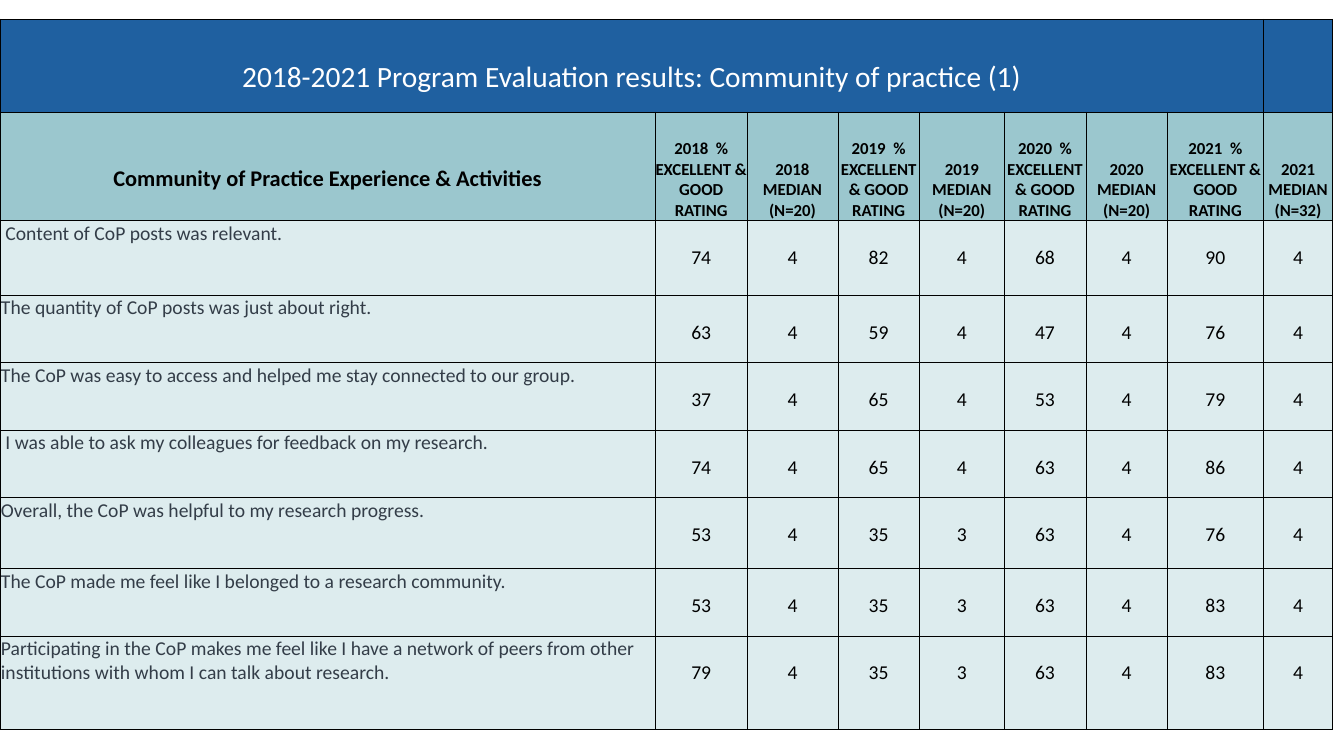
from lxml import etree
from pptx import Presentation
from pptx.dml.color import RGBColor
from pptx.enum.text import MSO_ANCHOR, PP_ALIGN
from pptx.oxml.ns import qn
from pptx.util import Inches, Pt

LEFT, CENTER = PP_ALIGN.LEFT, PP_ALIGN.CENTER
TOP, BOTTOM = MSO_ANCHOR.TOP, MSO_ANCHOR.BOTTOM
BLUE = RGBColor(0x1F, 0x60, 0xA0)
TEAL = RGBColor(0x9B, 0xC7, 0xCE)
PALE = RGBColor(0xDD, 0xEC, 0xEE)
SLATE = RGBColor(0x33, 0x3D, 0x48)
BLACK = RGBColor(0, 0, 0)
WHITE = RGBColor(0xFF, 0xFF, 0xFF)

COLUMN_WIDTHS = [6.5, 0.91, 0.9, 0.81, 0.84, 0.81, 0.81, 0.95, 0.69]
ROW_HEIGHTS = [0.92, 1.08, 0.74, 0.67, 0.67, 0.67, 0.7, 0.67, 0.93]
RESPONDENTS = {2018: 20, 2019: 20, 2020: 20, 2021: 32}

# Statement, then rating and median for each year
RESULTS = [
    (" Content of CoP posts was relevant.", 74, 4, 82, 4, 68, 4, 90, 4),
    ("The quantity of CoP posts was just about right.", 63, 4, 59, 4, 47, 4, 76, 4),
    ("The CoP was easy to access and helped me stay connected to our group.",
     37, 4, 65, 4, 53, 4, 79, 4),
    (" I was able to ask my colleagues for feedback on my research.",
     74, 4, 65, 4, 63, 4, 86, 4),
    ("Overall, the CoP was helpful to my research progress.",
     53, 4, 35, 3, 63, 4, 76, 4),
    ("The CoP made me feel like I belonged to a research community.",
     53, 4, 35, 3, 63, 4, 83, 4),
    ("Participating in the CoP makes me feel like I have a network of peers from "
     "other institutions with whom I can talk about research.",
     79, 4, 35, 3, 63, 4, 83, 4),
]


def style_cell(cell, fill):
    """Fill a cell and give it thin black borders."""
    cell.fill.solid()
    cell.fill.fore_color.rgb = fill
    properties = cell._tc.get_or_add_tcPr()
    for position, side in enumerate(("lnL", "lnR", "lnT", "lnB")):
        border = etree.Element(qn(f"a:{side}"), w=str(Pt(0.5)))
        paint = etree.SubElement(border, qn("a:solidFill"))
        etree.SubElement(paint, qn("a:srgbClr"), val=str(BLACK))
        properties.insert(position, border)


def write_cell(cell, text, size, color, bold=False, align=CENTER, anchor=TOP,
               side=0, top=0, bottom=0):
    """Write one formatted paragraph, with insets in inches."""
    cell.margin_left = cell.margin_right = Inches(side)
    cell.margin_top, cell.margin_bottom = Inches(top), Inches(bottom)
    cell.vertical_anchor = anchor
    para = cell.text_frame.paragraphs[0]
    para.text = str(text)
    para.alignment = align
    para.font.name = "Calibri"
    para.font.size = Pt(size)
    para.font.bold = bold
    para.font.color.rgb = color


deck = Presentation()
deck.slide_width, deck.slide_height = Inches(13.33), Inches(7.5)
page = deck.slides.add_slide(deck.slide_layouts[6])

# Table grid
table = page.shapes.add_table(
    len(ROW_HEIGHTS), len(COLUMN_WIDTHS), Inches(0), Inches(0.19),
    Inches(sum(COLUMN_WIDTHS)), Inches(sum(ROW_HEIGHTS))).table
table.first_row = table.horz_banding = False
for column, width in zip(table.columns, COLUMN_WIDTHS):
    column.width = Inches(width)
for row_number, (row, height) in enumerate(zip(table.rows, ROW_HEIGHTS)):
    row.height = Inches(height)
    for cell in row.cells:
        style_cell(cell, (BLUE, TEAL)[row_number] if row_number < 2 else PALE)

# Title row
title = table.cell(0, 0)
title.merge(table.cell(0, 7))
write_cell(title, "2018-2021 Program Evaluation results: Community of practice (1)",
           21, WHITE, side=0.08, top=0.4, bottom=0.04)

# Column headings
write_cell(table.cell(1, 0), "Community of Practice Experience & Activities",
           16, BLACK, bold=True, anchor=BOTTOM)
# Lift the first heading to the level of the others' third line
table.cell(1, 0).margin_bottom = Inches(0.28)
headings = []
for year, count in RESPONDENTS.items():
    headings += [f"{year}  % EXCELLENT & GOOD RATING", f"{year} MEDIAN (N={count})"]
for column_number, heading in enumerate(headings, start=1):
    write_cell(table.cell(1, column_number), heading, 12, BLACK,
               bold=True, anchor=BOTTOM)

# Results
for row_number, (statement, *scores) in enumerate(RESULTS, start=2):
    write_cell(table.cell(row_number, 0), statement, 14, SLATE, align=LEFT,
               side=0.01, top=0.01)
    for column_number, score in enumerate(scores, start=1):
        write_cell(table.cell(row_number, column_number), score, 14, BLACK,
                   side=0.01, top=0.25)

deck.save("out.pptx")
